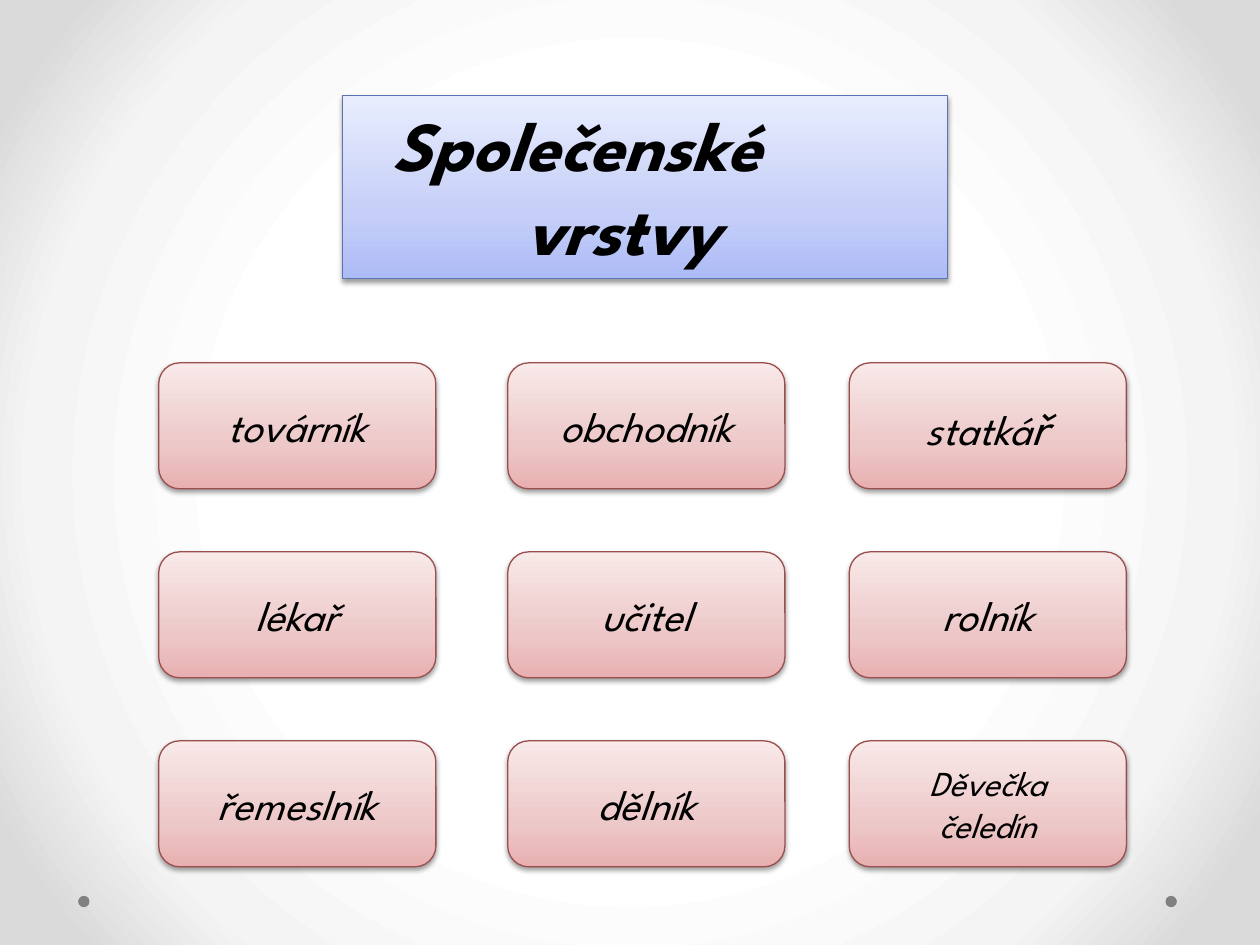
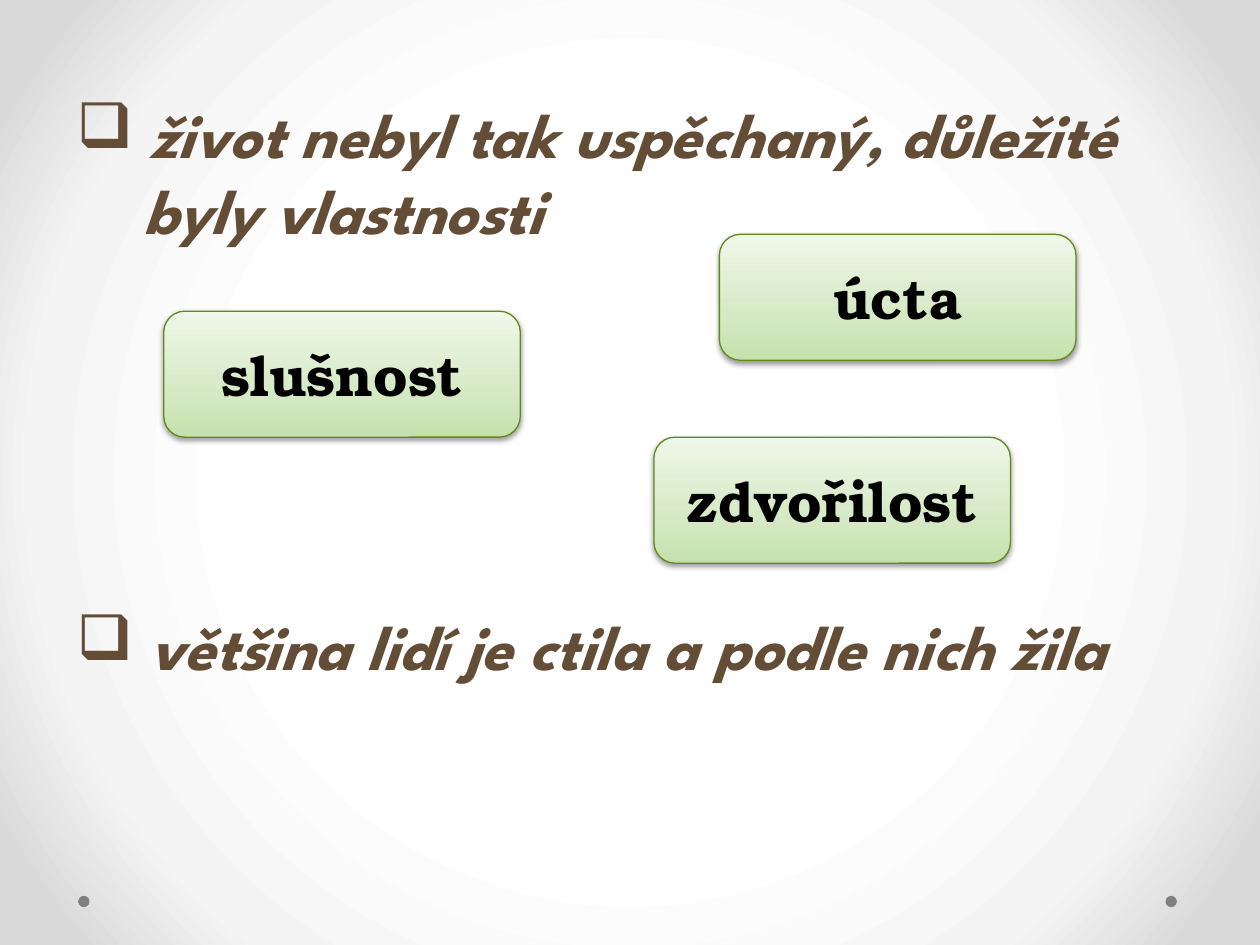
"""Build two slides on social classes and the virtues people valued."""
from dataclasses import dataclass
from typing import Any, NamedTuple

from pptx import Presentation
from pptx.dml.color import RGBColor
from pptx.enum.shapes import MSO_SHAPE
from pptx.enum.text import MSO_ANCHOR, MSO_AUTO_SIZE, PP_ALIGN
from pptx.oxml import parse_xml
from pptx.oxml.ns import nsdecls, qn
from pptx.util import Inches, Pt

RECTANGLE, ROUNDED, OVAL = MSO_SHAPE.RECTANGLE, MSO_SHAPE.ROUNDED_RECTANGLE, MSO_SHAPE.OVAL
TOP, MIDDLE = MSO_ANCHOR.TOP, MSO_ANCHOR.MIDDLE
LEFT, CENTER = PP_ALIGN.LEFT, PP_ALIGN.CENTER
GROW, FIXED = MSO_AUTO_SIZE.SHAPE_TO_FIT_TEXT, MSO_AUTO_SIZE.NONE

SCRIPT, SERIF = "League Spartan", "TeX Gyre Bonum"
BLACK, BROWN, GRAY = "000000", "634D36", "808080"
UPWARD = '<a:lin ang="16200000" scaled="1"/>'
RADIAL = '<a:path path="circle"><a:fillToRect l="50000" t="50000" r="50000" b="50000"/></a:path>'
BACKGROUND = ((50, "FFFFFF"), (76, "F4F4F4"), (92, "DADADA"))


class Area(NamedTuple):
    """Left, top, width and height in inches."""

    left: float
    top: float
    width: float
    height: float


class Span(NamedTuple):
    """A piece of text with its size in points."""

    text: str
    size: float


@dataclass(frozen=True)
class Line:
    """One paragraph with its left margin, first-line indent and bullet."""

    spans: tuple[Span, ...]
    margin: float = 0
    indent: float = 0
    bullet: str = ""


@dataclass(frozen=True)
class TextStyle:
    """Font, colour and placement of the text in a frame."""

    name: str
    color: str = BLACK
    bold: bool = False
    italic: bool = False
    align: Any = CENTER
    anchor: Any = MIDDLE
    fit: Any = FIXED


@dataclass(frozen=True)
class CardStyle:
    """Outline, gradient from bottom to top, and text of a card."""

    shape: Any
    gradient: tuple[str, str, str]
    border: str
    text: TextStyle


HEADING = CardStyle(RECTANGLE, ("ADBBF6", "C5CFF8", "E8ECFD"), "5C72B2",
                    TextStyle(SCRIPT, bold=True, italic=True, align=LEFT, anchor=TOP, fit=GROW))
CLASS_CARD = CardStyle(ROUNDED, ("E8B0B0", "EDC8C8", "F9E9E9"), "9A4E4E",
                       TextStyle(SCRIPT, italic=True))
VIRTUE_CARD = CardStyle(ROUNDED, ("C5E1AB", "D6E9C5", "EFF7E9"), "62891C",
                        TextStyle(SERIF, bold=True))
STATEMENT = TextStyle(SCRIPT, BROWN, True, True, LEFT, TOP, GROW)

COLUMNS = (1.26, 4.03, 6.74)
ROWS = (2.88, 4.38, 5.88)
CLASSES = (
    ("továrník", "obchodník", (Line((Span("statká", 24), Span("ř", 28))),)),
    ("lékař", "učitel", "rolník"),
    ("řemeslník", "dělník", (Line((Span("Děvečka", 20),)), Line((Span("čeledín", 20),)))),
)
VIRTUES = (("slušnost", 1.3, 2.47), ("zdvořilost", 5.19, 3.47), ("úcta", 5.71, 1.86))
STATEMENTS = (
    (Area(0.51, 0.71, 9.4, 1.31),
     (Line((Span("život nebyl tak uspěchaný, důležité", 36),), 0.58, -0.58, "❑"),
      Line((Span("byly vlastnosti", 36),), 0.53))),
    (Area(0.51, 4.77, 9.34, 0.71),
     (Line((Span("většina lidí je ctila a podle nich žila", 36),), 0.58, -0.58, "❑"),)),
)


def rgb(color: str) -> RGBColor:
    """Turn a hex string into a colour."""
    return RGBColor.from_string(color)


def assign(target: Any, values: dict[str, Any]) -> None:
    """Set each named attribute on the target."""
    for name, value in values.items():
        setattr(target, name, value)


def box_of(area: Area) -> list[int]:
    """Convert an area to slide lengths."""
    return [Inches(length) for length in area]


def single(text: str, size: float) -> tuple[Line, ...]:
    """Make one paragraph of one span."""
    return (Line((Span(text, size),)),)


def paint_gradient(owner: Any, fill: Any, stops: Any, direction: str) -> None:
    """Fill the owner with a gradient of the given stops."""
    fill.gradient()
    start = next(owner.element.iter(qn("a:gradFill")))
    marks = "".join(f'<a:gs pos="{percent * 1000}"><a:srgbClr val="{color}"/></a:gs>'
                    for percent, color in stops)
    start.getparent().replace(start, parse_xml(
        f'<a:gradFill {nsdecls("a")} rotWithShape="1"><a:gsLst>{marks}</a:gsLst>'
        f'{direction}</a:gradFill>'))


def add_shadow(box: Any) -> None:
    """Give the box a soft shadow below."""
    box.shadow.inherit = False
    next(box.element.iter(qn("a:effectLst"))).append(parse_xml(
        f'<a:outerShdw {nsdecls("a")} blurRad="{Pt(3.1)}" dist="{Pt(1.6)}" dir="5400000" '
        f'rotWithShape="0"><a:srgbClr val="{BLACK}"><a:alpha val="38000"/></a:srgbClr>'
        '</a:outerShdw>'))


def write(frame: Any, lines: tuple[Line, ...], style: TextStyle) -> None:
    """Write the lines into the frame."""
    assign(frame, {"word_wrap": True, "auto_size": style.fit, "vertical_anchor": style.anchor})
    for number, line in enumerate(lines):
        para = frame.add_paragraph() if number else frame.paragraphs[0]
        para.alignment = style.align
        layout = para._p.get_or_add_pPr()
        layout.set("marL", str(Inches(line.margin)))
        layout.set("indent", str(Inches(line.indent)))
        if line.bullet:
            layout.append(parse_xml(f'<a:buChar {nsdecls("a")} char="{line.bullet}"/>'))
        for span in line.spans:
            run = para.add_run()
            run.text = span.text
            assign(run.font, {"name": style.name, "size": Pt(span.size),
                              "bold": style.bold, "italic": style.italic})
            run.font.color.rgb = rgb(style.color)


def add_card(page: Any, area: Area, lines: tuple[Line, ...], style: CardStyle) -> None:
    """Draw a shaded card with text."""
    box = page.shapes.add_shape(style.shape, *box_of(area))
    paint_gradient(box, box.fill, zip((0, 35, 100), style.gradient), UPWARD)
    box.line.color.rgb = rgb(style.border)
    box.line.width = Pt(0.75)
    add_shadow(box)
    write(box.text_frame, lines, style.text)


def add_page(deck: Any) -> Any:
    """Add a page with the shared background and corner dots."""
    page = deck.slides.add_slide(deck.slide_layouts[6])
    paint_gradient(page, page.background.fill, BACKGROUND, RADIAL)
    for left in (9.25, 0.62):
        dot = page.shapes.add_shape(OVAL, *box_of(Area(left, 7.11, 0.09, 0.09)))
        dot.shadow.inherit = False
        dot.fill.solid()
        dot.fill.fore_color.rgb = rgb(GRAY)
        dot.line.fill.background()
    return page


def build_classes(deck: Any) -> None:
    """Build the grid of social classes."""
    page = add_page(deck)
    title = (Line((Span("Společenské", 40),), 0.3), Line((Span("vrstvy", 40),), 1.35))
    add_card(page, Area(2.72, 0.76, 4.8, 1.45), title, HEADING)
    for top, names in zip(ROWS, CLASSES):
        for left, name in zip(COLUMNS, names):
            lines = single(name, 24) if isinstance(name, str) else name
            add_card(page, Area(left, top, 2.2, 1), lines, CLASS_CARD)


def build_virtues(deck: Any) -> None:
    """Build the statements and the valued virtues."""
    page = add_page(deck)
    for area, lines in STATEMENTS:
        write(page.shapes.add_textbox(*box_of(area)).text_frame, lines, STATEMENT)
    for name, left, top in VIRTUES:
        add_card(page, Area(left, top, 2.83, 1), single(name, 32), VIRTUE_CARD)


def main() -> None:
    """Build and save the deck."""
    deck = Presentation()
    assign(deck, {"slide_width": Inches(10), "slide_height": Inches(7.5)})
    build_classes(deck)
    build_virtues(deck)
    deck.save("out.pptx")


if __name__ == "__main__":
    main()
